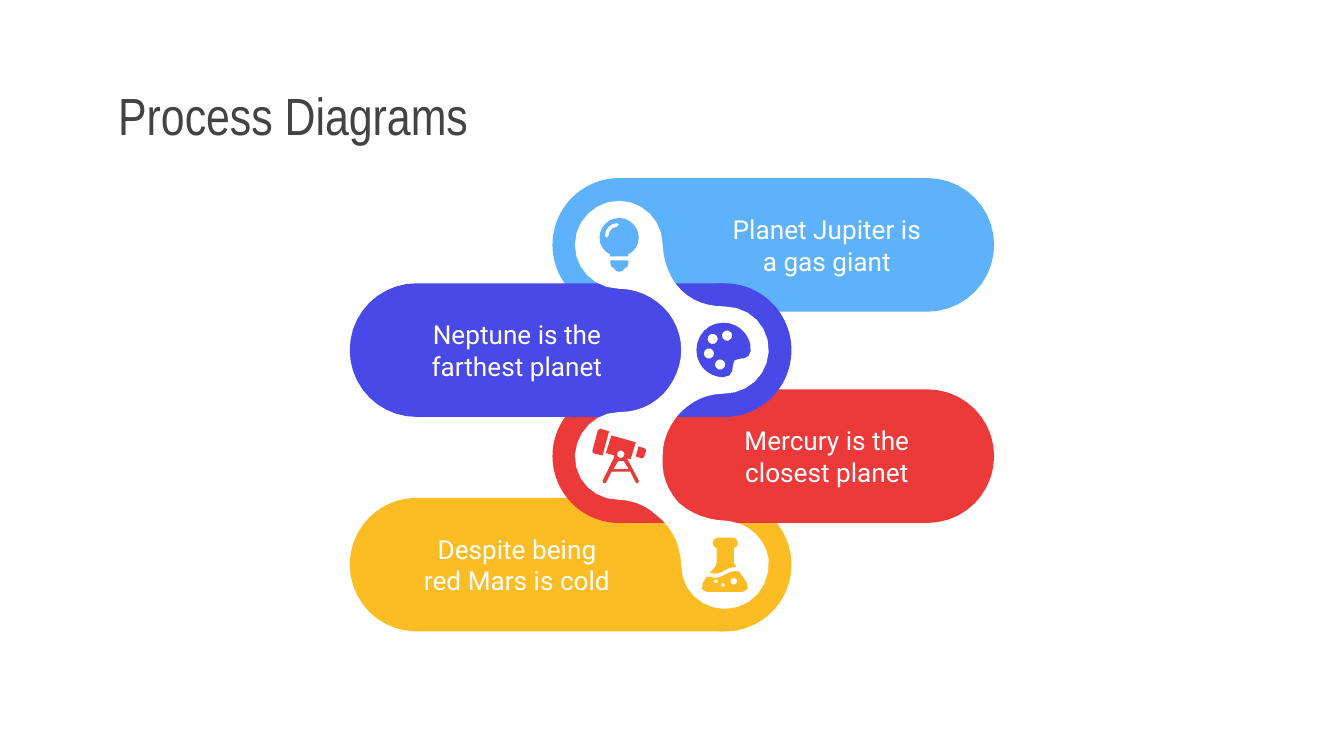
import math

from pptx import Presentation
from pptx.dml.color import RGBColor
from pptx.enum import shapes, text
from pptx.util import Pt

YELLOW = RGBColor(0xFC, 0xBD, 0x24)
RED = RGBColor(0xEC, 0x3A, 0x3B)
SKY = RGBColor(0x5E, 0xB2, 0xFC)
INDIGO = RGBColor(0x49, 0x49, 0xE7)
WHITE = RGBColor(0xFF, 0xFF, 0xFF)
GREY = RGBColor(0x43, 0x43, 0x43)

deck = Presentation()
deck.slide_width, deck.slide_height = Pt(720), Pt(405)
page = deck.slides.add_slide(deck.slide_layouts[6])


def circle(x, y, radius):
    """Return a small circular contour."""
    angles = [math.tau * step / 10 for step in range(10)]
    return [(x + radius * math.cos(a), y + radius * math.sin(a)) for a in angles]


def outline(color, *contours):
    """Draw contours of points; a six-number entry is a Bezier curve."""
    builder = None
    for contour in contours:
        points = [contour[0]]
        for entry in contour[1:]:
            if len(entry) == 2:
                points.append(entry)
                continue
            x0, y0 = points[-1]
            x1, y1, x2, y2, x3, y3 = entry
            count = max(2, min(6, round(math.dist((x0, y0), (x3, y3)) / 2.5)))
            for step in range(1, count + 1):
                t = step / count
                a, b, c, d = (1 - t) ** 3, 3 * t * (1 - t) ** 2, 3 * t * t * (1 - t), t ** 3
                points.append((a * x0 + b * x1 + c * x2 + d * x3,
                               a * y0 + b * y1 + c * y2 + d * y3))
        points = [(Pt(x), Pt(y)) for x, y in points]
        if builder is None:
            builder = page.shapes.build_freeform(*points[0])
        else:
            builder.move_to(*points[0])
        builder.add_line_segments(points[1:], close=True)
    shape = builder.convert_to_shape()
    shape.shadow.inherit = False
    shape.fill.solid()
    shape.fill.fore_color.rgb = color
    shape.line.fill.background()
    return shape


# Title
title = page.shapes.add_textbox(Pt(56.2), Pt(42.5), Pt(608.4), Pt(38.2))
frame = title.text_frame
frame.word_wrap = True
frame.vertical_anchor = text.MSO_ANCHOR.MIDDLE
frame.margin_left = frame.margin_right = frame.margin_top = frame.margin_bottom = Pt(7.2)
para = frame.paragraphs[0]
para.text = "Process Diagrams"
para.font.name, para.font.size, para.font.color.rgb = "Arial Narrow", Pt(28), GREY

# Step pills: a body with one round end, joined to a round hub; side is its direction
RADIUS, LENGTH = 35.8, 165
HUB_LEFT, HUB_RIGHT = 331.8, 388.2
steps = [
    ("Despite being red Mars is cold", YELLOW, HUB_RIGHT, 302.5, -1),
    ("Mercury is the closest planet", RED, HUB_LEFT, 244.4, 1),
    ("Planet Jupiter is a gas giant", SKY, HUB_LEFT, 131.2, 1),
    ("Neptune is the farthest planet", INDIGO, HUB_RIGHT, 187.6, -1),
]
for label, color, hub, middle, side in steps:
    angles = [math.pi * step / 20 for step in range(21)]
    round_end = [(hub + side * (LENGTH + RADIUS * math.sin(a)),
                  middle - RADIUS * math.cos(a)) for a in angles]
    body = outline(color, [(hub, middle - RADIUS), *round_end, (hub, middle + RADIUS)])
    frame = body.text_frame
    frame.word_wrap = True
    frame.vertical_anchor = text.MSO_ANCHOR.MIDDLE
    frame.margin_top = frame.margin_bottom = Pt(7.2)
    frame.margin_left, frame.margin_right = (Pt(57.6), Pt(36))[::side]
    para = frame.paragraphs[0]
    para.text = label
    para.alignment = text.PP_ALIGN.CENTER
    para.font.name, para.font.size, para.font.color.rgb = "Roboto", Pt(14), WHITE

    cap = page.shapes.add_shape(shapes.MSO_SHAPE.OVAL, Pt(hub - RADIUS), Pt(middle - RADIUS),
                                Pt(2 * RADIUS), Pt(2 * RADIUS))
    cap.shadow.inherit = False
    cap.fill.solid()
    cap.fill.fore_color.rgb = color
    cap.line.fill.background()

# White ribbon that winds through the hubs
outline(WHITE, [
    (331.7, 107.6), (319, 107.6, 308, 118, 308, 131.2),
    (308, 144, 318.4, 154.4, 331.2, 154.7), (340.6, 154.7, 349.2, 158.4, 355.7, 164.9),
    (361.4, 170.6, 365, 179, 365, 187.5), (365, 196, 361.4, 204.5, 355.6, 210.9),
    (349, 217.4, 341.5, 220.8, 331.7, 220.8), (319, 220.8, 309, 231, 308, 243.6),
    (307.6, 257.5, 318.4, 267.8, 331.7, 267.8), (339, 268, 346, 270.7, 351.4, 275.8),
    (355, 278.9), (361.4, 285, 364.7, 293.8, 365, 303),
    (365, 316, 375.5, 326.2, 388.3, 326.2), (402.5, 326.2, 413, 314, 411.8, 299.5),
    (410.4, 289.4, 401.8, 280.8, 391.7, 279.4), (388.8, 279),
    (379.4, 278.6, 370.8, 275.8, 363.4, 269.2), (357.1, 262, 354.5, 254, 355, 246),
    (355, 244), (355, 235.5, 358.5, 227.5, 364.5, 221),
    (371, 214.6, 378.7, 211, 387, 211), (401, 211, 411, 201, 411.8, 188.6),
    (412.5, 175, 401.8, 164.2, 388.1, 164.2), (378.7, 164.2, 370.8, 161.3, 365, 155.5),
    (358.5, 149, 355.3, 140, 355, 131), (355, 118, 344.2, 107.6, 331.7, 107.6),
])

# Flask: liquid with bubbles, then neck
outline(YELLOW, circle(383.6, 311.4, 1), circle(393.1, 311.4, 1.8), circle(387.4, 313.4, 1), [
    (393.8, 306), (389.5, 306, 387.4, 309.6, 383, 309.6), (378.7, 308.9), (376.4, 312.5),
    (375, 314.6, 376, 317.1, 378.7, 317.1), (398, 317.1),
    (400.5, 317.1, 401.5, 314.6, 400.3, 312.5), (396, 306.2),
])
outline(YELLOW, [
    (384.5, 288), (383, 288, 381.8, 289.3, 381.8, 290.9),
    (381.8, 292.3, 382.6, 293.4, 383.9, 293.7), (383.9, 301.5),
    (383.9, 303.2, 383, 304, 380.2, 306.9), (383.2, 307.4),
    (387.4, 307.4, 388.9, 303.8, 393.8, 303.8), (394.6, 303.8),
    (393.9, 303, 393.1, 302.3, 393.1, 301.5), (393.1, 293.7),
    (394.4, 293.4, 395.3, 292.3, 395.3, 290.9), (395.3, 289.3, 394, 288, 392.4, 288),
])

# Light bulb: glass with glare, then socket
outline(SKY, [
    (330.6, 119.5), (331.9, 119.5, 331.9, 121.5, 330.6, 121.5),
    (328, 121.7, 326.1, 123.8, 326, 126.5), (325.8, 127.6, 324.2, 127.6, 324.1, 126.5),
    (324, 122.5, 327, 119.5, 330.6, 119.5),
], [
    (331.7, 116.8), (325.8, 116.8, 321.2, 121.6, 321.2, 127.4),
    (321.2, 131.3, 323.4, 134.6, 326.7, 136.2), (326.9, 137.4), (336.5, 137.4),
    (336.7, 136.2), (340, 134.6, 342.2, 131.3, 342.2, 127.4),
    (342.2, 121.6, 337.6, 116.8, 331.7, 116.8),
])
outline(SKY, [
    (327, 139.5), (327, 141.2), (327, 142.6, 327.8, 143.5, 329, 143.9),
    (329.4, 145, 330.4, 145.6, 331.8, 145.6), (333.2, 145.6, 334.1, 145, 334.5, 143.9),
    (335.8, 143.5, 336.6, 142.6, 336.6, 141.2), (336.6, 139.5),
])

# Palette with paint wells
wells = [(389.5, 179.8), (381.8, 181.6), (379.8, 189.4), (385.8, 195.3)]
outline(INDIGO, *[circle(x, y, 2.8) for x, y in wells], [
    (387.5, 172.9), (379.3, 172.9, 373.1, 179.5, 373.1, 187.6),
    (373.1, 194.6, 378, 200.5, 384.6, 201.8), (387.4, 202.1),
    (391.6, 202.1, 392.7, 199.2, 392.7, 195.3), (392.7, 193.6, 393.9, 192.3, 395.5, 192.3),
    (400.4, 192.3, 403, 190.5, 402, 184.6), (400.5, 177.8, 394.6, 172.9, 387.5, 172.9),
])

# Telescope: front lens, tube on its tripod, eyepiece
outline(RED, [
    (321.6, 229.7), (320.3, 230.5), (317.3, 241.9), (318, 242.9), (322.8, 244.1),
    (326.3, 231.1),
])
outline(RED, circle(332.6, 243.4, 2),
        [(334.2, 247.1), (336.9, 251.4), (328.6, 251.4), (331.2, 247.1)], [
    (327.6, 233.3), (324.6, 242.8), (329.1, 244), (328.9, 245.3), (322.8, 257.7),
    (322.5, 259.2, 324.1, 259.5, 324.7, 258.6), (327.6, 252.7), (337.7, 252.7),
    (340.6, 258.6), (341.2, 259.5, 342.6, 259.2, 342.3, 257.7), (335.9, 245.5),
    (337.9, 246.2), (340.6, 237),
])
outline(RED, [
    (342.1, 239.1), (340.6, 244.6), (344.1, 245.6), (345, 245), (346.2, 241.3),
    (345.6, 240.3),
])

deck.save("out.pptx")
